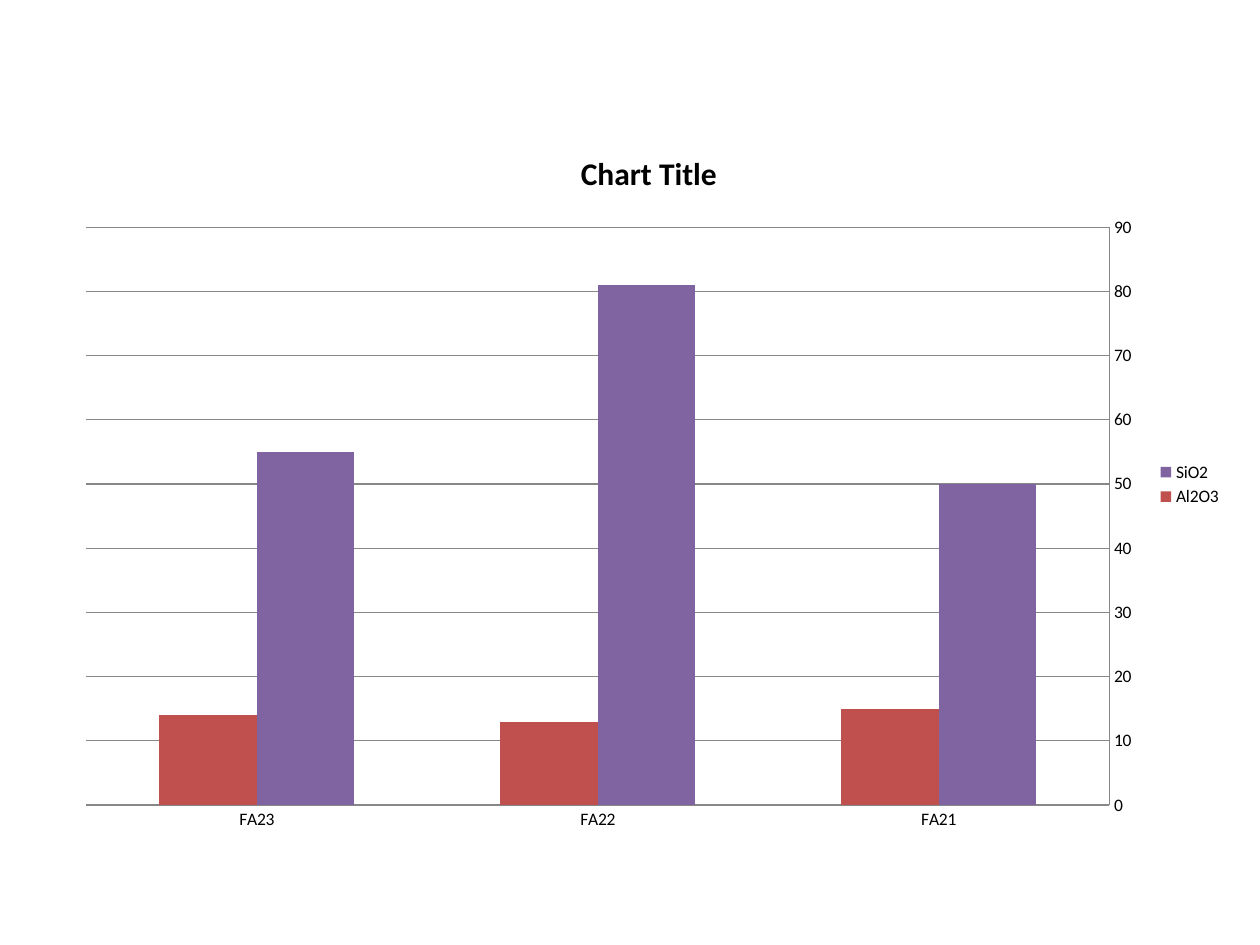
from pptx import Presentation
from pptx import util as u
from pptx.chart.data import CategoryChartData
from pptx.dml.color import RGBColor
from pptx.enum import chart as ch

COLORS = {"text": "000000", "line": "878787", "SiO2": "8064A2", "Al2O3": "C0504D"}
OXIDES = {"SiO2": (50, 81, 55), "Al2O3": (15, 13, 14)}
SAMPLES = ("FA21", "FA22", "FA23")


class Deck:
    font = "Calibri"

    def __init__(self, width, height):
        self.prs = Presentation()
        self.prs.slide_width, self.prs.slide_height = u.Inches(width), u.Inches(height)
        self.s = self.prs.slides.add_slide(self.prs.slide_layouts[6])

    def style_font(self, font, size, bold=False):
        font.name, font.size, font.bold = self.font, u.Pt(size), bold
        font.color.rgb = RGBColor.from_string(COLORS["text"])

    def style_line(self, line):
        line.color.rgb = RGBColor.from_string(COLORS["line"])
        line.width = u.Pt(0.75)

    def column_chart(self, title, categories, series, left, top, width, height):
        data = CategoryChartData()
        data.categories = categories
        for name, values in series.items():
            data.add_series(name, values)
        chart = self.s.shapes.add_chart(
            ch.XL_CHART_TYPE.COLUMN_CLUSTERED, u.Inches(left), u.Inches(top),
            u.Inches(width), u.Inches(height), data).chart
        self.style_font(chart.font, 10)

        tf = chart.chart_title.text_frame
        tf.text = title
        self.style_font(tf.paragraphs[0].font, 18, bold=True)
        chart.chart_title.include_in_layout = False

        chart.has_legend = True
        chart.legend.position = ch.XL_LEGEND_POSITION.RIGHT
        chart.legend.include_in_layout = False

        for axis in (chart.category_axis, chart.value_axis):
            axis.major_tick_mark = axis.minor_tick_mark = ch.XL_TICK_MARK.NONE
            self.style_line(axis.format.line)
        chart.category_axis.reverse_order = True
        chart.value_axis.has_major_gridlines = True
        self.style_line(chart.value_axis.major_gridlines.format.line)
        chart.value_axis.minimum_scale = 0
        chart.value_axis.maximum_scale = 90
        chart.value_axis.major_unit = 10

        plot = chart.plots[0]
        plot.gap_width = 150
        plot.vary_by_categories = False
        for ser in plot.series:
            ser.format.fill.solid()
            ser.format.fill.fore_color.rgb = RGBColor.from_string(COLORS[ser.name])


def main():
    deck = Deck(10, 7.5)
    deck.column_chart("Chart Title", SAMPLES, OXIDES, 0.5, 0.99, 9.3, 5.71)
    deck.prs.save("out.pptx")


if __name__ == "__main__":
    main()
